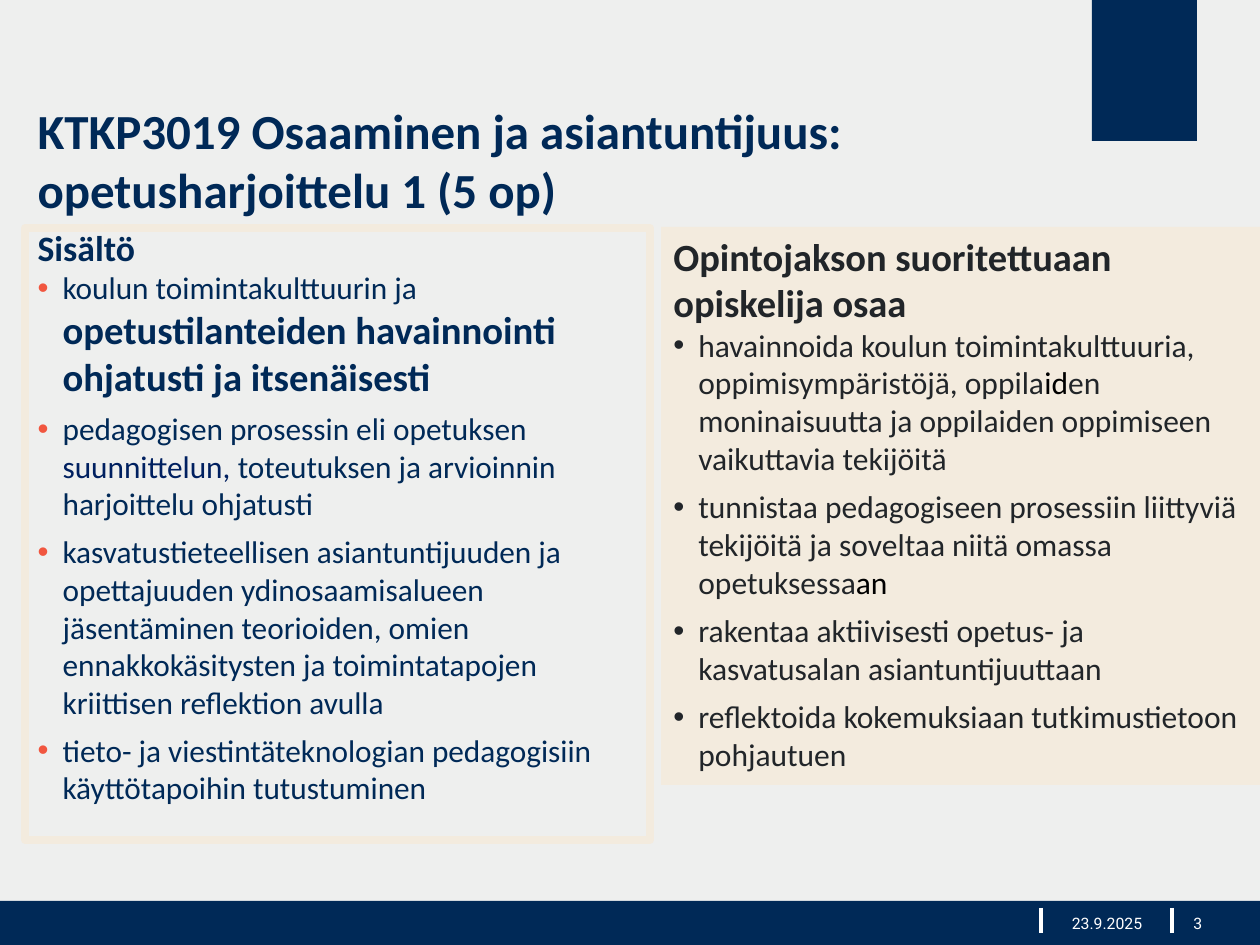
from dataclasses import dataclass
from typing import Optional

from lxml.etree import SubElement
from pptx import Presentation
from pptx.dml.color import RGBColor
from pptx.enum.shapes import MSO_CONNECTOR, MSO_SHAPE
from pptx.enum.text import MSO_ANCHOR, MSO_AUTO_SIZE, PP_ALIGN
from pptx.oxml.ns import qn
from pptx.util import Pt

EMU_PER_PX = 914400 / 126
NAVY, CORAL, SAND, WHITE = "002957", "F1563F", "F3EBDE", "FFFFFF"
INK, BLACK, DEEP_BLUE = "212529", "000000", "002060"
BULLET_INDENT = 25


@dataclass(frozen=True)
class Box:
    left: int
    top: int
    width: int
    height: int

    def emu(self) -> tuple[int, ...]:
        return tuple(px(n) for n in (self.left, self.top, self.width, self.height))


@dataclass(frozen=True)
class Span:
    text: str
    color: Optional[str] = None
    size: Optional[float] = None
    bold: Optional[bool] = None


@dataclass(frozen=True)
class Style:
    size: float
    color: str
    bold: bool = False
    font: str = "Calibri"


@dataclass(frozen=True)
class Column:
    heading: str
    heading_style: Style
    heading_spacing: float
    item_style: Style
    bullet_color: str
    items: list[list[Span]]


def px(length: int) -> int:
    return round(length * EMU_PER_PX)


def rgb(color: str) -> RGBColor:
    return RGBColor.from_string(color)


def write(paragraph, spans: list[Span], style: Style) -> None:
    font = paragraph.font
    font.name, font.size, font.bold = style.font, Pt(style.size), style.bold
    font.color.rgb = rgb(style.color)
    for span in spans:
        run = paragraph.add_run()
        run.text = span.text
        if span.color:
            run.font.color.rgb = rgb(span.color)
        if span.size:
            run.font.size = Pt(span.size)
        if span.bold is not None:
            run.font.bold = span.bold


def set_bullet(paragraph, color: str) -> None:
    properties = paragraph._p.get_or_add_pPr()
    properties.set("marL", str(px(BULLET_INDENT)))
    properties.set("indent", str(-px(BULLET_INDENT)))
    bullet_color = SubElement(properties, qn("a:buClr"))
    SubElement(bullet_color, qn("a:srgbClr"), val=color)
    SubElement(properties, qn("a:buFont"), typeface="Arial")
    SubElement(properties, qn("a:buChar"), char="•")


def clear_bullet(paragraph) -> None:
    properties = paragraph._p.get_or_add_pPr()
    properties.set("marL", "0")
    properties.set("indent", "0")
    SubElement(properties, qn("a:buNone"))


def place(shape, box: Box) -> None:
    shape.left, shape.top, shape.width, shape.height = box.emu()


def prepare_frame(shape, anchor: MSO_ANCHOR = MSO_ANCHOR.TOP):
    frame = shape.text_frame
    frame.word_wrap = True
    frame.auto_size = MSO_AUTO_SIZE.NONE
    frame.vertical_anchor = anchor
    return frame


def add_block(slide, box: Box, color: str):
    block = slide.shapes.add_shape(MSO_SHAPE.RECTANGLE, *box.emu())
    block.shadow.inherit = False
    block.fill.solid()
    block.fill.fore_color.rgb = rgb(color)
    block.line.fill.background()
    return block


def add_divider(slide, x: int, top: int, bottom: int) -> None:
    divider = slide.shapes.add_connector(
        MSO_CONNECTOR.STRAIGHT, px(x), px(top), px(x), px(bottom))
    divider.line.color.rgb = rgb(WHITE)
    divider.line.width = Pt(2)
    SubElement(divider._element.spPr, qn("a:effectLst"))


def add_footer_text(slide, box: Box, text: str, align: PP_ALIGN) -> None:
    frame = prepare_frame(slide.shapes.add_textbox(*box.emu()))
    paragraph = frame.paragraphs[0]
    paragraph.alignment = align
    write(paragraph, [Span(text)], Style(9, WHITE, font="Roboto"))


def fill_column(shape, column: Column) -> None:
    frame = prepare_frame(shape)
    heading = frame.paragraphs[0]
    heading.alignment = PP_ALIGN.LEFT
    heading.line_spacing = column.heading_spacing
    heading.space_before = Pt(0)
    clear_bullet(heading)
    write(heading, [Span(column.heading)], column.heading_style)
    for spans in column.items:
        item = frame.add_paragraph()
        item.alignment = PP_ALIGN.LEFT
        item.space_before, item.space_after = Pt(0), Pt(6)
        set_bullet(item, column.bullet_color)
        write(item, spans, column.item_style)


CONTENT = Column("Sisältö", Style(20.4, NAVY, True), 0.8, Style(17.9, NAVY), CORAL, [
    [Span("koulun toimintakulttuurin ja "),
     Span("opetustilanteiden havainnointi ohjatusti ja itsenäisesti", size=22.1, bold=True)],
    [Span("pedagogisen prosessin eli opetuksen "), Span("suunnittelun,", DEEP_BLUE),
     Span(" toteutuksen ja arvioinnin harjoittelu ohjatusti")],
    [Span("kasvatustieteellisen asiantuntijuuden ja opettajuuden ydinosaamisalueen "
          "jäsentäminen teorioiden, omien ennakkokäsitysten ja toimintatapojen "
          "kriittisen reflektion avulla")],
    [Span("tieto- ja viestintäteknologian pedagogisiin käyttötapoihin tutustuminen")],
])

OUTCOMES = Column("Opintojakson suoritettuaan opiskelija osaa", Style(22, INK, True), 1.0,
                  Style(18, INK), INK, [
    [Span("havainnoida koulun toimintakulttuuria, oppimisympäristöjä, oppila"),
     Span("id", BLACK),
     Span("en moninaisuutta ja oppilaiden oppimiseen vaikuttavia tekijöitä")],
    [Span("tunnistaa pedagogiseen prosessiin liittyviä tekijöitä ja soveltaa niitä "
          "omassa opetuksessa"), Span("an", BLACK)],
    [Span("rakentaa aktiivisesti opetus- ja kasvatusalan asiantuntijuuttaan")],
    [Span("reflektoida kokemuksiaan tutkimustietoon pohjautuen")],
])


def main() -> None:
    presentation = Presentation()
    presentation.slide_width, presentation.slide_height = px(1260), px(945)
    slide = presentation.slides.add_slide(presentation.slide_layouts[1])
    slide.background.fill.solid()
    slide.background.fill.fore_color.rgb = rgb("EEEFEE")

    add_block(slide, Box(1092, 0, 105, 141), NAVY)
    add_block(slide, Box(0, 901, 1260, 44), NAVY)
    for x in (1041, 1172):
        add_divider(slide, x, 908, 933)
    add_footer_text(slide, Box(1050, 908, 114, 25), "23.9.2025", PP_ALIGN.CENTER)
    add_footer_text(slide, Box(1181, 908, 63, 25), "3", PP_ALIGN.LEFT)

    title = slide.shapes.title
    place(title, Box(25, 89, 1134, 141))
    title_line = prepare_frame(title, MSO_ANCHOR.MIDDLE).paragraphs[0]
    title_line.alignment = PP_ALIGN.LEFT
    write(title_line, [Span("KTKP3019 Osaaminen ja asiantuntijuus: opetusharjoittelu 1 (5 op)")],
          Style(28, NAVY, True))

    content = slide.placeholders[1]
    place(content, Box(25, 228, 625, 612))
    content.line.color.rgb = rgb(SAND)
    content.line.width = Pt(4.5)
    fill_column(content, CONTENT)

    fill_column(add_block(slide, Box(661, 227, 599, 558), SAND), OUTCOMES)
    presentation.save("out.pptx")


if __name__ == "__main__":
    main()
